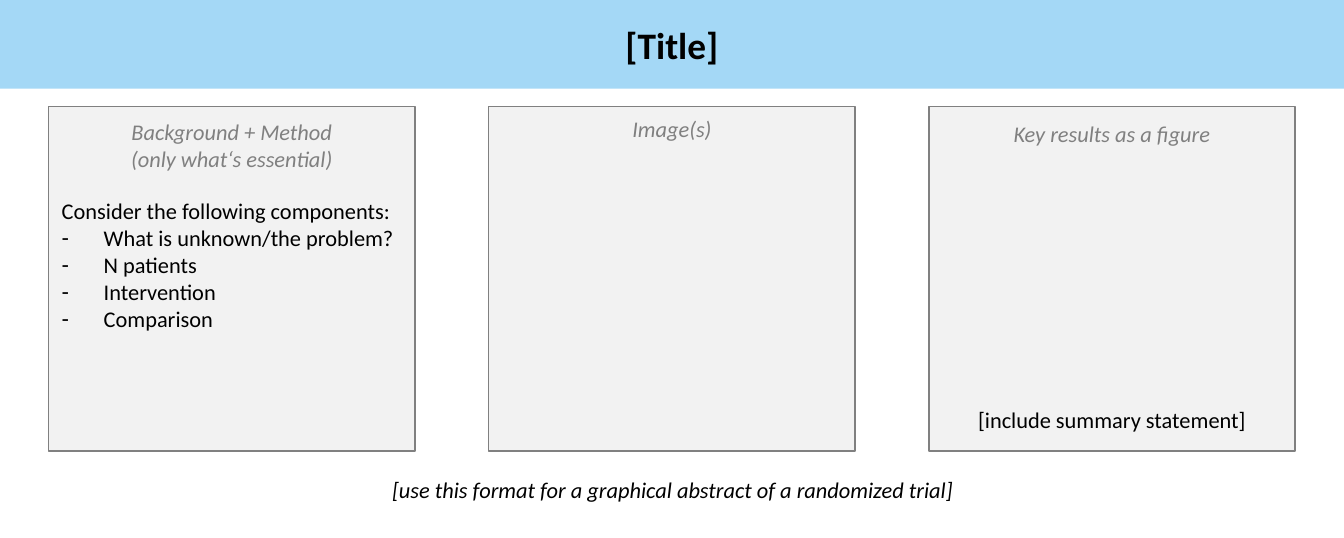
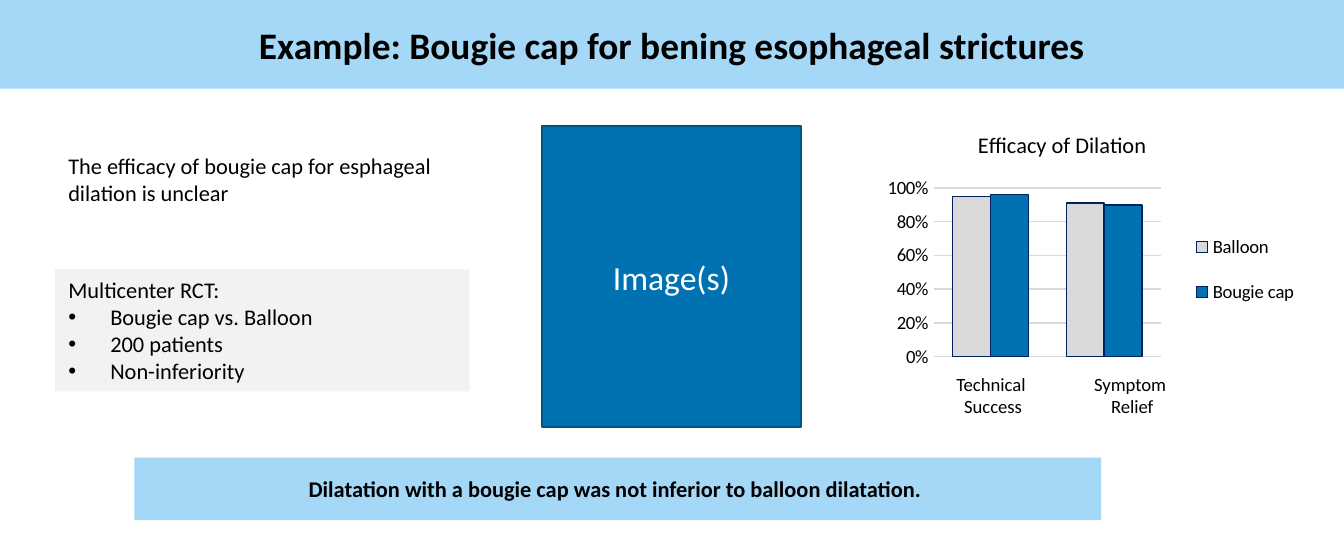
from lxml import etree
from pptx import Presentation
from pptx.chart.data import CategoryChartData
from pptx.dml.color import RGBColor
from pptx.enum.chart import XL_CHART_TYPE, XL_LEGEND_POSITION, XL_TICK_MARK
from pptx.enum.shapes import MSO_SHAPE
from pptx.enum.text import MSO_ANCHOR, PP_ALIGN
from pptx.oxml.ns import qn
from pptx.util import Pt

COLORS = {
    "band": "A4D8F6",
    "panel": "F2F2F2",
    "gray": "808080",
    "black": "000000",
    "white": "FFFFFF",
    "blue": "0072B2",
    "dark blue": "005484",
    "navy": "002060",
    "light gray": "D9D9D9",
}
RGB = {name: RGBColor.from_string(value) for name, value in COLORS.items()}
FONT = "Calibri"
WIDTH, HEIGHT, BAND_HEIGHT = 720, 288, 47.5
INDENT = 22.5

TITLE = {"size": Pt(20), "bold": True}
BODY = {"size": Pt(12)}
HINT = {"size": Pt(12), "italic": True}
LABEL = {"size": Pt(10)}
STATEMENT = {"size": Pt(12), "bold": True}
IMAGE = {"size": Pt(18)}


def write(frame, lines, style, color="black", align=PP_ALIGN.CENTER, bullet=None):
    """Fill a text frame; with a bullet, every line after the first is a list item."""
    frame.word_wrap = True
    for number, line in enumerate(lines):
        paragraph = frame.paragraphs[0] if number == 0 else frame.add_paragraph()
        paragraph.alignment = align
        if bullet and number:
            properties = paragraph._p.get_or_add_pPr()
            properties.set("marL", str(Pt(INDENT)))
            properties.set("indent", str(-Pt(INDENT)))
            etree.SubElement(properties, qn("a:buFont"), typeface="Arial")
            etree.SubElement(properties, qn("a:buChar"), char=bullet)
        run = paragraph.add_run()
        run.text = line
        for name, value in {"name": FONT, **style}.items():
            setattr(run.font, name, value)
        run.font.color.rgb = RGB[color]


def add_box(slide, left, top, width, height, fill, line=None):
    shape = slide.shapes.add_shape(
        MSO_SHAPE.RECTANGLE, Pt(left), Pt(top), Pt(width), Pt(height))
    shape.shadow.inherit = False
    shape.fill.solid()
    shape.fill.fore_color.rgb = RGB[fill]
    if line:
        shape.line.color.rgb = RGB[line]
        shape.line.width = Pt(1)
    else:
        shape.line.fill.background()
    return shape


presentation = Presentation()
presentation.slide_width, presentation.slide_height = Pt(WIDTH), Pt(HEIGHT)

# Shared title band and title position live on the layout
layout = presentation.slide_layouts.get_by_name("Title Only")
layout_title = layout.placeholders[0]
layout_title.left, layout_title.top = 0, 0
layout_title.width, layout_title.height = Pt(WIDTH), Pt(BAND_HEIGHT)

slides = []
for title in ("[Title]", "Example: Bougie cap for bening esophageal strictures"):
    slide = presentation.slides.add_slide(layout)
    slide.shapes.title.text_frame.vertical_anchor = MSO_ANCHOR.MIDDLE
    write(slide.shapes.title.text_frame, [title], TITLE)
    slides.append(slide)
template, example = slides

band = add_box(template, 0, 0, WIDTH, BAND_HEIGHT, "band")
layout.shapes.element.insert(2, band.element)

# Template slide: three equal panels
MARGIN, PANEL_WIDTH = 26, 196.5
STEP = (WIDTH - 2 * MARGIN - PANEL_WIDTH) / 2
columns = [MARGIN + number * STEP for number in range(3)]
for left in columns:
    add_box(template, left, 57, PANEL_WIDTH, 184.5, "panel", "gray")

components = ["Consider the following components:", "What is unknown/the problem?",
              "N patients", "Intervention", "Comparison"]
hint = {"style": HINT, "color": "gray"}
listing = {"style": BODY, "align": PP_ALIGN.LEFT}
text_boxes = [
    (template, columns[0], 59.8, PANEL_WIDTH, 36,
     ["Background + Method", "(only what‘s essential)"], hint),
    (template, columns[1], 58.3, PANEL_WIDTH, 21.8, ["Image(s)"], hint),
    (template, columns[2], 60.5, PANEL_WIDTH, 21.8, ["Key results as a figure"], hint),
    (template, 80, 251.5, 561, 21.8,
     ["[use this format for a graphical abstract of a randomized trial]"],
     {"style": HINT}),
    (template, columns[0], 102.2, PANEL_WIDTH, 109, components,
     {**listing, "bullet": "-"}),
    (template, columns[2], 214, PANEL_WIDTH, 21.8, ["[include summary statement]"],
     {"style": BODY}),
    (example, 29.5, 78, 222, 36,
     ["The efficacy of bougie cap for esphageal dilation is unclear"], listing),
    (example, 485.5, 196, 93, 31.5, ["Technical ", "Success"], {"style": LABEL}),
    (example, 576.5, 196, 60, 31.5, ["Symptom ", "Relief"], {"style": LABEL}),
]
for slide, left, top, width, height, lines, options in text_boxes:
    text_box = slide.shapes.add_textbox(Pt(left), Pt(top), Pt(width), Pt(height))
    write(text_box.text_frame, lines, **options)

# Example slide: filled boxes
trial = ["Multicenter RCT:", "Bougie cap vs. Balloon", "200 patients", "Non-inferiority"]
filled_boxes = [
    ((29.5, 144, 222, 65.5, "panel"), trial, {**listing, "bullet": "•"}),
    ((290.5, 67.7, 138.5, 161, "blue", "dark blue"), ["Image(s)"],
     {"style": IMAGE, "color": "white"}),
    ((72, 245, 518, 33.5, "band"),
     ["Dilatation with a bougie cap was not inferior to balloon dilatation. "],
     {"style": STATEMENT}),
]
for box, lines, options in filled_boxes:
    shape = add_box(example, *box)
    shape.text_frame.vertical_anchor = MSO_ANCHOR.MIDDLE
    write(shape.text_frame, lines, **options)

# Example slide: chart
chart_data = CategoryChartData(number_format="0%")
chart_data.categories = ["1", "2"]
chart_data.add_series("Balloon", [0.95, 0.91])
chart_data.add_series("Bougie cap", [0.96, 0.9])
chart = example.shapes.add_chart(
    XL_CHART_TYPE.COLUMN_CLUSTERED, Pt(436.5), Pt(60.5), Pt(265), Pt(143.5),
    chart_data).chart
chart.has_title = True
write(chart.chart_title.text_frame, ["Efficacy of Dilation"],
      {"size": Pt(12), "bold": False})
chart.has_legend = True
chart.legend.position = XL_LEGEND_POSITION.RIGHT
chart.legend.include_in_layout = False

value_axis = chart.value_axis
axis_format = {
    "minimum_scale": 0, "maximum_scale": 1, "major_unit": 0.2,
    "major_tick_mark": XL_TICK_MARK.NONE, "minor_tick_mark": XL_TICK_MARK.NONE,
}
for name, value in axis_format.items():
    setattr(value_axis, name, value)
value_axis.tick_labels.number_format = "0%"
value_axis.tick_labels.number_format_is_linked = False
value_axis.format.line.fill.background()
value_axis.major_gridlines.format.line.color.rgb = RGB["light gray"]
value_axis.major_gridlines.format.line.width = Pt(0.75)
chart.category_axis.visible = False

for font, size in ((chart.font, 14), (value_axis.tick_labels.font, 10),
                   (chart.legend.font, 10)):
    font.name, font.size = FONT, Pt(size)
    font.color.rgb = RGB["black"]

plot = chart.plots[0]
plot.gap_width, plot.overlap, plot.vary_by_categories = 100, 0, False
for series, color in zip(plot.series, ("light gray", "blue")):
    series.format.fill.solid()
    series.format.fill.fore_color.rgb = RGB[color]
    series.format.line.color.rgb = RGB["navy"]
    series.format.line.width = Pt(0.75)

# Fixed places of plot area and legend, as fractions of the chart
chart_element = chart.element.find(qn("c:chart"))
for tag, index, target, place in (
        ("c:plotArea", 0, "inner", (0.24, 0.28, 0.46, 0.63)),
        ("c:legend", 1, None, (0.74, 0.37, 0.26, 0.43))):
    part = chart_element.find(qn(tag))
    for old_layout in part.findall(qn("c:layout")):
        part.remove(old_layout)
    part_layout = etree.Element(qn("c:layout"))
    manual = etree.SubElement(part_layout, qn("c:manualLayout"))
    settings = {"layoutTarget": target, "xMode": "edge", "yMode": "edge",
                **dict(zip("xywh", place))}
    for name, value in settings.items():
        if value is not None:
            etree.SubElement(manual, qn("c:" + name), val=str(value))
    part.insert(index, part_layout)

presentation.save("out.pptx")
